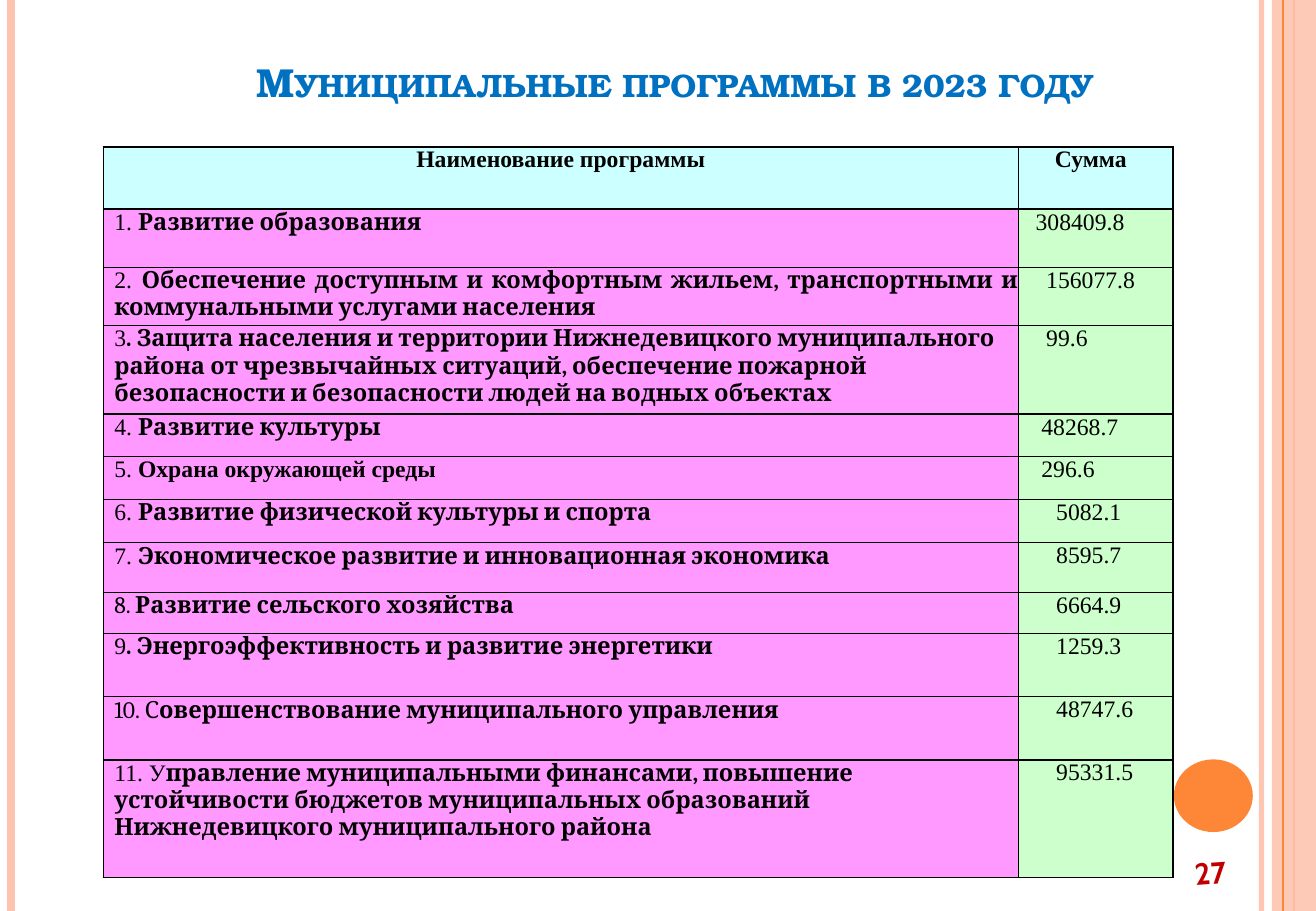
"""Build the slide with the table of municipal programmes for 2023."""
from dataclasses import dataclass

import pptx
import pptx.dml.color
import pptx.enum.shapes
import pptx.enum.text
import pptx.oxml.ns
import pptx.util
from lxml import etree

Cm = pptx.util.Cm
Pt = pptx.util.Pt
RGBColor = pptx.dml.color.RGBColor
Align = pptx.enum.text.PP_ALIGN
Anchor = pptx.enum.text.MSO_ANCHOR
Shape = pptx.enum.shapes.MSO_SHAPE
qn = pptx.oxml.ns.qn

PEACH = RGBColor(0xFE, 0xC3, 0xAE)
ORANGE = RGBColor(0xFE, 0x86, 0x37)
BLUE = RGBColor(0x00, 0x70, 0xC0)
RED = RGBColor(0xC0, 0x00, 0x00)
BLACK = RGBColor(0x00, 0x00, 0x00)
CYAN = RGBColor(0xCC, 0xFF, 0xFF)
PINK = RGBColor(0xFF, 0x99, 0xFF)
GREEN = RGBColor(0xCC, 0xFF, 0xCC)

SERIF = "Times New Roman"
CAMBRIA = "Cambria"
HEIGHT = 19.05
COLUMNS = (19.13, 3.23)
HEADER_HEIGHT = 1.3


@dataclass
class Stripe:
    x: float
    width: float
    color: RGBColor
    alpha: int = 100


@dataclass
class Run:
    text: str
    font: str = SERIF
    bold: bool = False


@dataclass
class Program:
    number: str
    name: str
    amount: str
    height: float
    amount_indent: float
    number_font: str = SERIF
    name_font: str = CAMBRIA
    align: Align = Align.LEFT


STRIPES = (
    Stripe(26.37, 3, PEACH, 93),
    Stripe(0.23, 4.5, PEACH),
    Stripe(27.05, 1.5, ORANGE),
)
INNER_STRIPE = Stripe(26.82, 0.75, ORANGE)

PROGRAMS = (
    Program("1. ", "Развитие образования", "308409.8", 1.22, 0.36),
    Program("2. ", "Обеспечение доступным и комфортным жильем, транспортными и "
            "коммунальными услугами населения", "156077.8", 1.22, 0.58,
            align=Align.JUSTIFY),
    Program("3", ". Защита населения и территории Нижнедевицкого муниципального "
            "района от чрезвычайных ситуаций, обеспечение пожарной безопасности "
            "и безопасности людей на водных объектах", "99.6", 1.85, 0.58),
    Program("4. ", "Развитие культуры", "48268.7", 0.89, 0.48),
    Program("5. ", "Охрана окружающей среды", "296.6", 0.89, 0.48,
            name_font=SERIF),
    Program("6. ", "Развитие физической культуры и спорта", "5082.1", 0.91, 0.79),
    Program("7. ", "Экономическое развитие и инновационная экономика",
            "8595.7", 1.04, 0.79),
    Program("8. ", "Развитие сельского хозяйства", "6664.9", 0.86, 0.79,
            number_font=CAMBRIA),
    Program("9", ". Энергоэффективность и развитие энергетики",
            "1259.3", 1.32, 0.79),
    Program("10. С", "овершенствование муниципального управления",
            "48747.6", 1.32, 0.79, number_font=CAMBRIA),
    Program("11. У", "правление муниципальными финансами, повышение устойчивости "
            "бюджетов муниципальных образований Нижнедевицкого муниципального "
            "района", "95331.5", 2.46, 0.79),
)


def set_alpha(sp_pr: etree._Element, percent: int) -> None:
    color = next(sp_pr.iter(qn("a:srgbClr")))
    etree.SubElement(color, qn("a:alpha")).set("val", str(percent * 1000))


def format_run(r, font: str, size: float, color: RGBColor, bold: bool) -> None:
    r.font.name = font
    r.font.size = Pt(size)
    r.font.color.rgb = color
    r.font.bold = bold


def add_stripe(s, stripe: Stripe) -> None:
    line = s.shapes.add_connector(
        pptx.enum.shapes.MSO_CONNECTOR.STRAIGHT,
        Cm(stripe.x), Cm(0), Cm(stripe.x), Cm(HEIGHT))
    line.line.color.rgb = stripe.color
    line.line.width = Pt(stripe.width)
    sp_pr = line._element.spPr
    if stripe.alpha < 100:
        set_alpha(sp_pr, stripe.alpha)
    etree.SubElement(sp_pr, qn("a:effectLst"))


def add_filled(s, kind: Shape, x: float, y: float, w: float, h: float,
               color: RGBColor, alpha: int = 100) -> None:
    sp = s.shapes.add_shape(kind, Cm(x), Cm(y), Cm(w), Cm(h))
    sp.shadow.inherit = False
    sp.fill.solid()
    sp.fill.fore_color.rgb = color
    sp.line.fill.background()
    if alpha < 100:
        set_alpha(sp._element.spPr, alpha)


def add_decoration(s) -> None:
    for stripe in STRIPES:
        add_stripe(s, stripe)
    add_filled(s, Shape.RECTANGLE, 26.59, 0, 0.92, HEIGHT, PEACH, 87)
    add_stripe(s, INNER_STRIPE)
    add_filled(s, Shape.OVAL, 24.54, 15.88, 1.65, 1.52, ORANGE)


def set_title(s) -> None:
    title = s.shapes.title
    title.left, title.top = Cm(1.37), Cm(0.58)
    title.width, title.height = Cm(24.77), Cm(1.63)
    tf = title.text_frame
    tf.text = "Муниципальные программы в 2023 году"
    tf.auto_size = pptx.enum.text.MSO_AUTO_SIZE.NONE
    tf.vertical_anchor = Anchor.BOTTOM
    tf.margin_left, tf.margin_top = Cm(0.71), Cm(0.58)
    tf.margin_right = tf.margin_bottom = 0
    p = tf.paragraphs[0]
    p.alignment = Align.CENTER
    r = p.runs[0]
    format_run(r, "TeX Gyre Bonum", 24, BLUE, True)
    r.font._element.set("cap", "small")


def fill_cell(cell, runs: list[Run], color: RGBColor, indent: float = 0,
              align: Align = Align.LEFT) -> None:
    cell.margin_left = Cm(indent)
    cell.margin_top = cell.margin_right = cell.margin_bottom = 0
    tc_pr = cell._tc.get_or_add_tcPr()
    for side in ("a:lnL", "a:lnR", "a:lnT", "a:lnB"):
        border = etree.SubElement(tc_pr, qn(side), w=str(Pt(1)))
        fill = etree.SubElement(border, qn("a:solidFill"))
        etree.SubElement(fill, qn("a:srgbClr"), val=str(BLACK))
    cell.fill.solid()
    cell.fill.fore_color.rgb = color
    p = cell.text_frame.paragraphs[0]
    p.alignment = align
    for run in runs:
        r = p.add_run()
        r.text = run.text
        format_run(r, run.font, 14, BLACK, run.bold)


def add_programs(s) -> None:
    heights = [HEADER_HEIGHT] + [program.height for program in PROGRAMS]
    table = s.shapes.add_table(
        len(heights), len(COLUMNS), Cm(2.16), Cm(3.07),
        Cm(sum(COLUMNS)), Cm(sum(heights))).table
    for column, width in zip(table.columns, COLUMNS):
        column.width = Cm(width)
    for row, height in zip(table.rows, heights):
        row.height = Cm(height)
    fill_cell(table.cell(0, 0), [Run("Наименование программы", bold=True)],
              CYAN, align=Align.CENTER)
    fill_cell(table.cell(0, 1), [Run("Сумма", bold=True)], CYAN, 0.76)
    for i, program in enumerate(PROGRAMS, start=1):
        name_runs = [Run(program.number, program.number_font),
                     Run(program.name, program.name_font, True)]
        fill_cell(table.cell(i, 0), name_runs, PINK, 0.23, program.align)
        fill_cell(table.cell(i, 1), [Run(program.amount)], GREEN,
                  program.amount_indent)


def add_page_number(s) -> None:
    sp = s.shapes.add_textbox(Cm(24.5), Cm(17.75), Cm(1.6), Cm(1))
    sp.rotation = 356
    tf = sp.text_frame
    tf.word_wrap = True
    tf.vertical_anchor = Anchor.MIDDLE
    tf.text = "27"
    p = tf.paragraphs[0]
    p.alignment = Align.CENTER
    format_run(p.runs[0], "Cabin", 18, RED, True)


def main() -> None:
    prs = pptx.Presentation()
    prs.slide_width, prs.slide_height = Cm(27.51), Cm(HEIGHT)
    s = prs.slides.add_slide(prs.slide_layouts[5])
    add_decoration(s)
    set_title(s)
    add_programs(s)
    add_page_number(s)
    prs.save("out.pptx")


if __name__ == "__main__":
    main()
